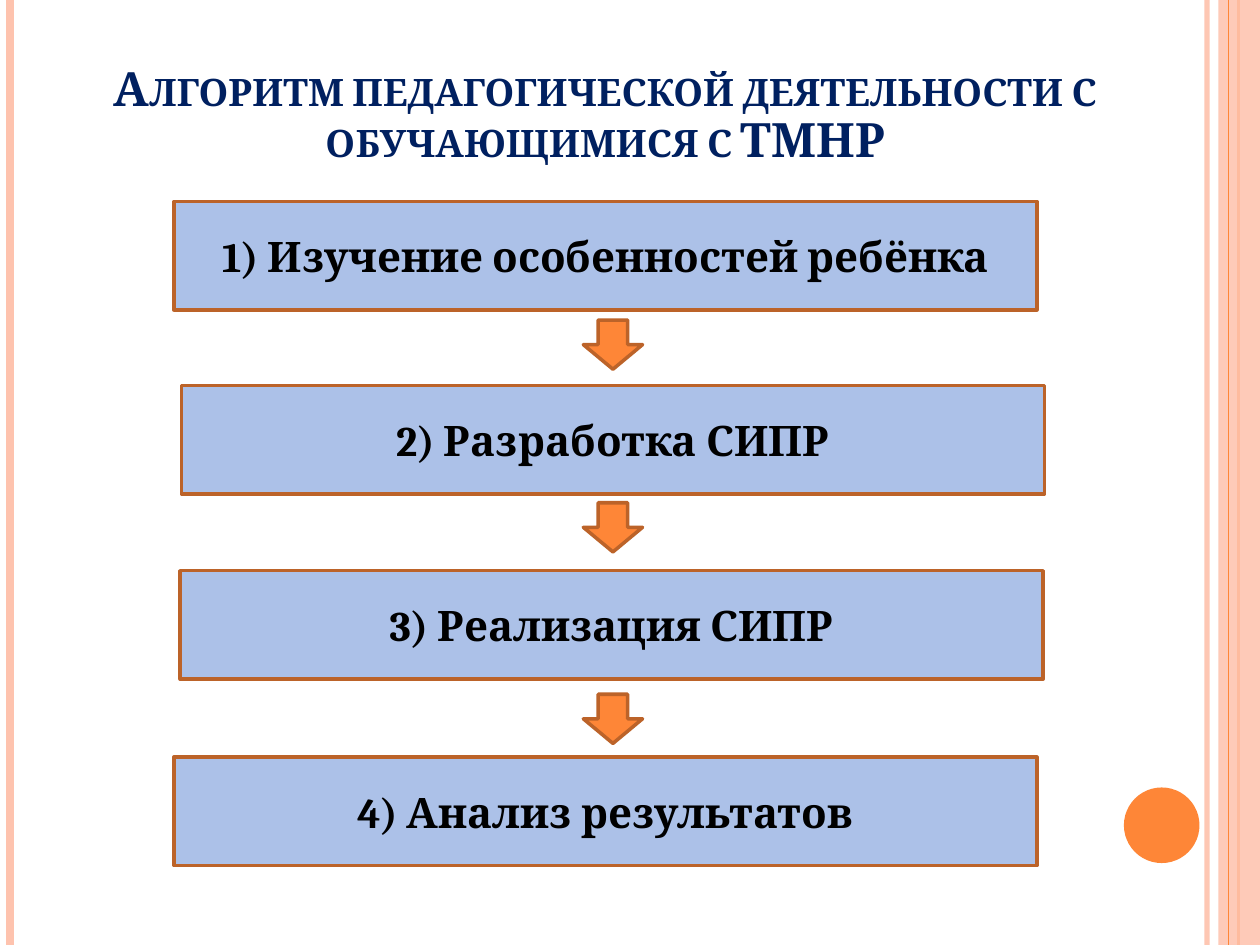
import pptx
import pptx.dml.color
import pptx.enum.shapes
import pptx.enum.text
import pptx.oxml
import pptx.oxml.ns
import pptx.util

Inches = pptx.util.Inches
Pt = pptx.util.Pt
SHAPE = pptx.enum.shapes.MSO_SHAPE
ANCHOR = pptx.enum.text.MSO_ANCHOR
CENTER = pptx.enum.text.PP_ALIGN.CENTER

ORANGE, PEACH, BROWN = "FE8637", "FEC3AE", "BC6329"
BLUE, NAVY, BLACK = "ACC1E8", "002060", "000000"

# Vertical stripes: x, colour, width in points, opacity in percent
STRIPES = [
    (9.58, PEACH, 3, 93),
    (0.08, PEACH, 4.5, 100),
    (9.83, ORANGE, 1.5, 100),
]
TITLE = "Алгоритм педагогической деятельности с обучающимися с ТМНР"
STEPS = [
    (1.38, 1.6, "1) Изучение особенностей ребёнка"),
    (1.44, 3.06, "2) Разработка СИПР"),
    (1.43, 4.53, "3) Реализация СИПР"),
    (1.38, 6.01, "4) Анализ результатов"),
]
ARROW_TOPS = [2.54, 3.99, 5.51]


def rgb(code):
    return pptx.dml.color.RGBColor.from_string(code)


def set_opacity(element, percent):
    """Add an alpha value to the first colour inside the element."""
    colour = element.find(".//" + pptx.oxml.ns.qn("a:srgbClr"))
    colour.append(pptx.oxml.parse_xml(
        f'<a:alpha {pptx.oxml.ns.nsdecls("a")} val="{percent * 1000}"/>'))


def format_text(frame, text, size, colour, **frame_format):
    for name, value in frame_format.items():
        setattr(frame, name, value)
    paragraph = frame.paragraphs[0]
    paragraph.alignment = CENTER
    run = paragraph.add_run()
    run.text = text
    font_format = {"size": Pt(size), "name": "Cambria", "bold": True}
    for name, value in font_format.items():
        setattr(run.font, name, value)
    run.font.color.rgb = rgb(colour)
    return run


def add_stripe(slide, x, colour, width, opacity=100):
    stripe = slide.shapes.add_connector(
        pptx.enum.shapes.MSO_CONNECTOR.STRAIGHT,
        Inches(x), 0, Inches(x), Inches(7.5))
    stripe.line.color.rgb = rgb(colour)
    stripe.line.width = Pt(width)
    properties = stripe._element.spPr
    if opacity < 100:
        set_opacity(properties, opacity)
    properties.append(pptx.oxml.parse_xml(
        f'<a:effectLst {pptx.oxml.ns.nsdecls("a")}/>'))


def add_block(slide, kind, box, fill, outline=None):
    block = slide.shapes.add_shape(kind, *map(Inches, box))
    block.shadow.inherit = False
    block.fill.solid()
    block.fill.fore_color.rgb = rgb(fill)
    if outline:
        block.line.color.rgb = rgb(outline)
        block.line.width = Pt(2)
    else:
        block.line.fill.background()
    return block


def add_decoration(slide):
    for stripe in STRIPES:
        add_stripe(slide, *stripe)
    band = add_block(slide, SHAPE.RECTANGLE, (9.67, 0, 0.33, 7.5), PEACH)
    set_opacity(band._element.spPr, 87)
    add_stripe(slide, 9.75, ORANGE, 0.75)
    add_block(slide, SHAPE.OVAL, (8.92, 6.25, 0.6, 0.6), ORANGE)


def fill_title(slide):
    title = slide.shapes.title
    place = {"left": 0.72, "top": 0.08, "width": 8.17, "height": 1.25}
    for name, value in place.items():
        setattr(title, name, Inches(value))
    run = format_text(title.text_frame, TITLE, 27, NAVY,
                      vertical_anchor=ANCHOR.BOTTOM, word_wrap=True,
                      auto_size=pptx.enum.text.MSO_AUTO_SIZE.NONE,
                      margin_bottom=0)
    title.text_frame.paragraphs[0].line_spacing = 0.9
    run.font._element.set("cap", "small")


def add_step(slide, left, top, text):
    step = add_block(slide, SHAPE.RECTANGLE, (left, top, 6.85, 0.86), BLUE, BROWN)
    format_text(step.text_frame, text, 24, BLACK,
                vertical_anchor=ANCHOR.MIDDLE, word_wrap=True)


def main():
    deck = pptx.Presentation()
    deck.slide_width, deck.slide_height = Inches(10), Inches(7.5)
    slide = deck.slides.add_slide(deck.slide_layouts[5])

    # Side stripes and circle
    add_decoration(slide)
    # Heading
    fill_title(slide)
    # Four steps joined by block arrows
    for step in STEPS:
        add_step(slide, *step)
    for top in ARROW_TOPS:
        add_block(slide, SHAPE.DOWN_ARROW, (4.63, top, 0.47, 0.39), ORANGE, BROWN)

    deck.save("out.pptx")


if __name__ == "__main__":
    main()
